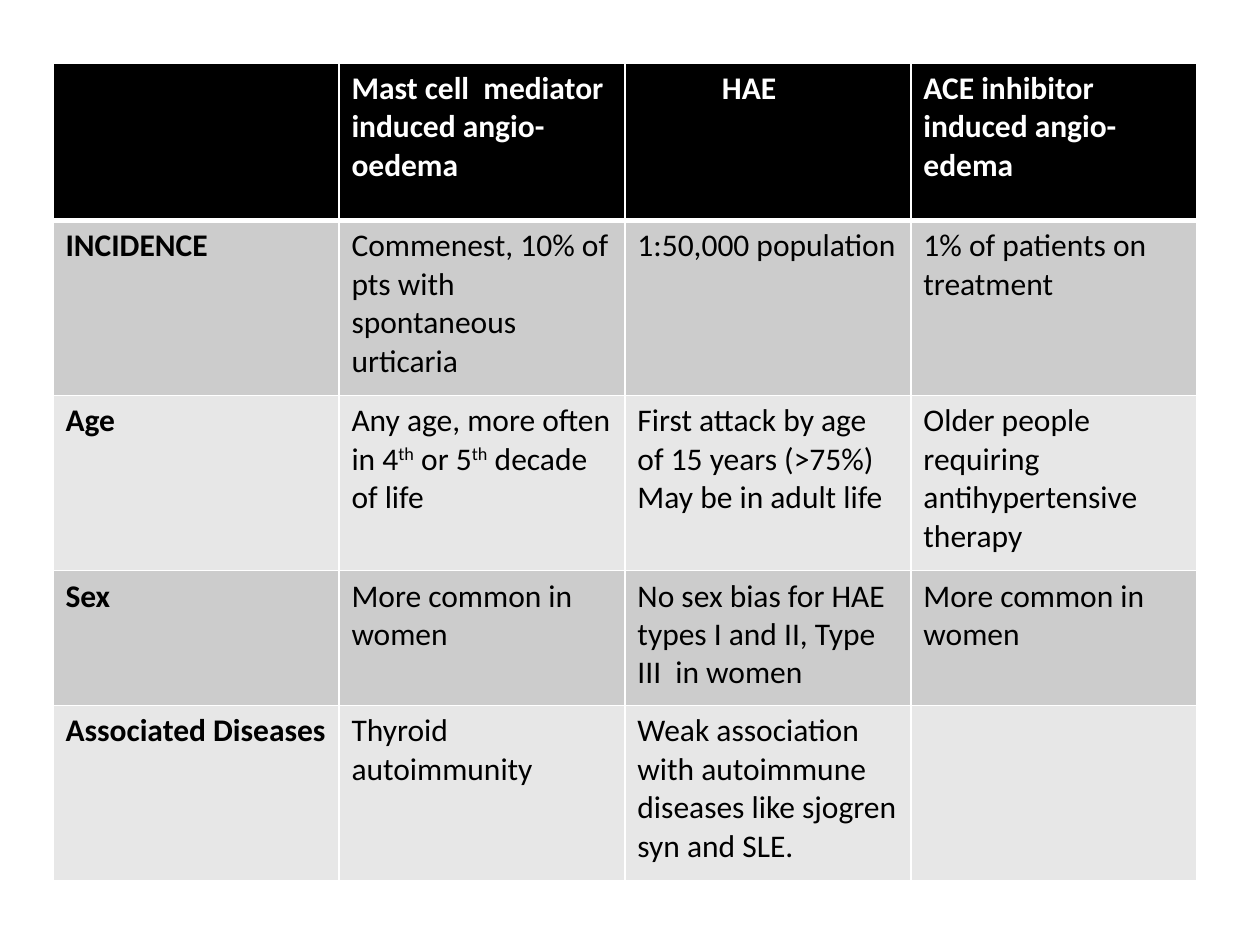
"""Build a slide with a table comparing three kinds of angio-oedema."""
from lxml.etree import SubElement
from pptx import Presentation
from pptx.dml.color import RGBColor
from pptx.oxml.ns import qn
from pptx.util import Inches, Pt

SLIDE_WIDTH, SLIDE_HEIGHT = 10, 7.5
LEFT, TOP, COLUMN_WIDTH = 0.42, 0.5, 2.27
ROW_HEIGHTS = [1.25, 1.39, 1.39, 1.07, 1.39]
HEADER_FILL, BAND_FILLS = "000000", ("CCCCCC", "E7E7E7")
WHITE, BLACK = "FFFFFF", "000000"
THIN, THICK = 1, 3
HAE_CELL, HAE_INDENT = (0, 2), 0.67
SUPERSCRIPT_MARK = "^"

ROWS = [
    ["", "Mast cell  mediator induced angio-oedema", "HAE",
     "ACE inhibitor induced angio-edema"],
    ["INCIDENCE", "Commenest, 10% of pts with spontaneous urticaria",
     "1:50,000 population", "1% of patients on treatment"],
    ["Age", "Any age, more often in 4^th^ or 5^th^ decade of life",
     "First attack by age of 15 years (>75%)\nMay be in adult life",
     "Older people requiring antihypertensive therapy"],
    ["Sex", "More common in women",
     "No sex bias for HAE types I and II, Type III  in women",
     "More common in women"],
    ["Associated Diseases", "Thyroid autoimmunity",
     "Weak association with autoimmune diseases like sjogren syn and SLE.", ""],
]


def color(value):
    """Return the colour of a hex string."""
    return RGBColor.from_string(value)


def write_text(cell, text, font_format, text_color):
    """Write paragraphs, raising the parts between superscript marks."""
    frame = cell.text_frame
    for number, line in enumerate(text.split("\n")):
        para = frame.add_paragraph() if number else frame.paragraphs[0]
        for part, words in enumerate(line.split(SUPERSCRIPT_MARK)):
            if not words:
                continue
            span = para.add_run()
            span.text = words
            for name, value in font_format.items():
                setattr(span.font, name, value)
            span.font.color.rgb = color(text_color)
            if part % 2:
                span.font._element.set("baseline", "30000")


def draw_borders(cell, widths):
    """Give the cell white borders of the given widths in points."""
    properties = cell._tc.get_or_add_tcPr()
    for side, width in widths.items():
        line = SubElement(properties, qn(f"a:ln{side}"), w=str(Pt(width)))
        fill = SubElement(line, qn("a:solidFill"))
        SubElement(fill, qn("a:srgbClr"), val=WHITE)


def format_cell(cell, row, column, text):
    """Fill, border and write one cell by its place in the grid."""
    header = row == 0
    draw_borders(cell, {"L": THIN, "R": THIN,
                        "T": THICK if row == 1 else THIN,
                        "B": THICK if header else THIN})
    cell.fill.solid()
    cell.fill.fore_color.rgb = color(
        HEADER_FILL if header else BAND_FILLS[(row - 1) % 2])
    font_format = {"name": "Calibri", "size": Pt(18),
                   "bold": header or column == 0}
    write_text(cell, text, font_format, WHITE if header else BLACK)
    if (row, column) == HAE_CELL:
        para = cell.text_frame.paragraphs[0]
        para._p.get_or_add_pPr().set("marL", str(Inches(HAE_INDENT)))


def main():
    """Create the deck and save it."""
    deck = Presentation()
    deck.slide_width, deck.slide_height = Inches(SLIDE_WIDTH), Inches(SLIDE_HEIGHT)
    page = deck.slides.add_slide(deck.slide_layouts[6])
    columns = len(ROWS[0])
    table = page.shapes.add_table(
        len(ROWS), columns, Inches(LEFT), Inches(TOP),
        Inches(COLUMN_WIDTH * columns), Inches(sum(ROW_HEIGHTS))).table
    for column in table.columns:
        column.width = Inches(COLUMN_WIDTH)
    for row, texts in enumerate(ROWS):
        table.rows[row].height = Inches(ROW_HEIGHTS[row])
        for column, text in enumerate(texts):
            format_cell(table.cell(row, column), row, column, text)
    deck.save("out.pptx")


if __name__ == "__main__":
    main()
